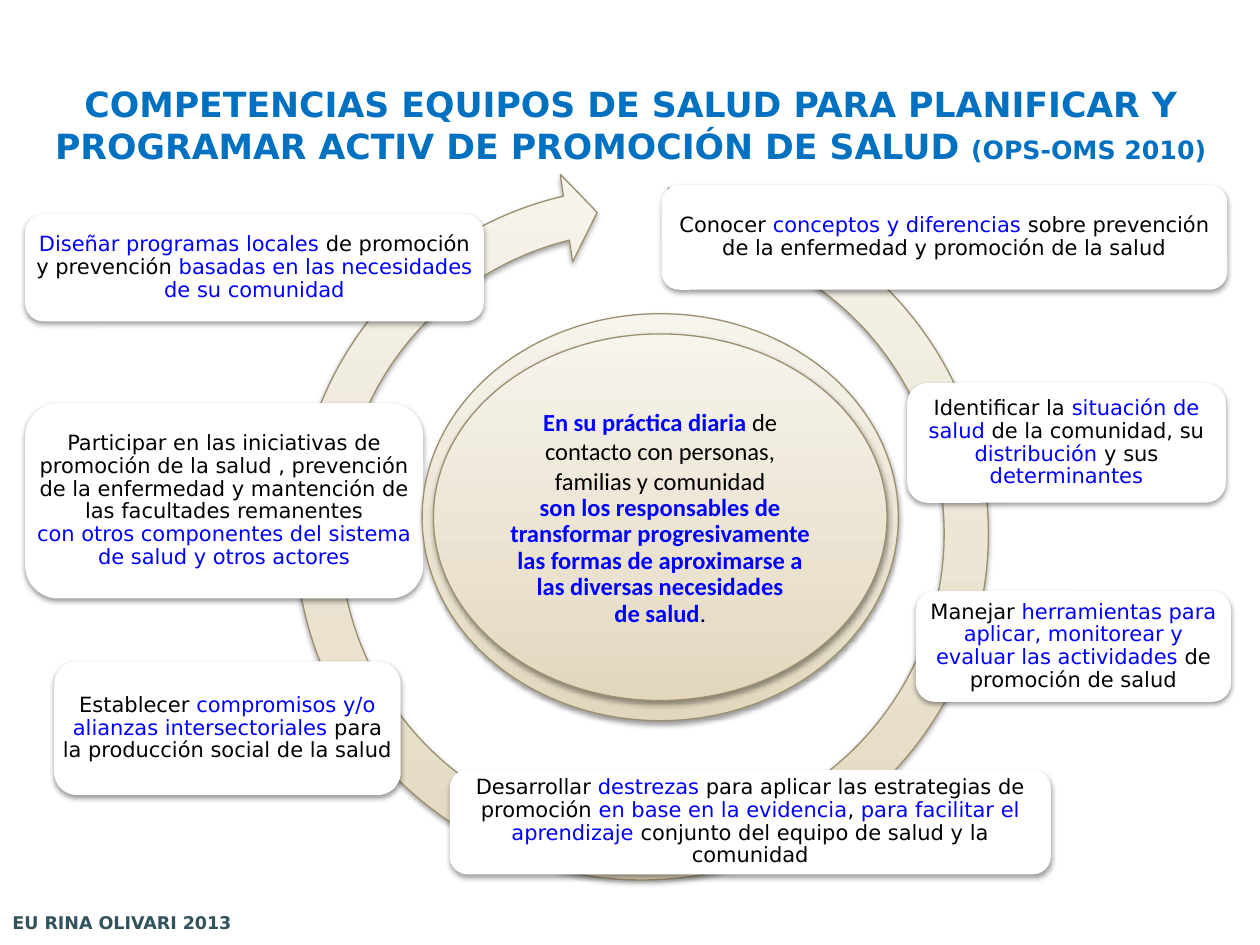
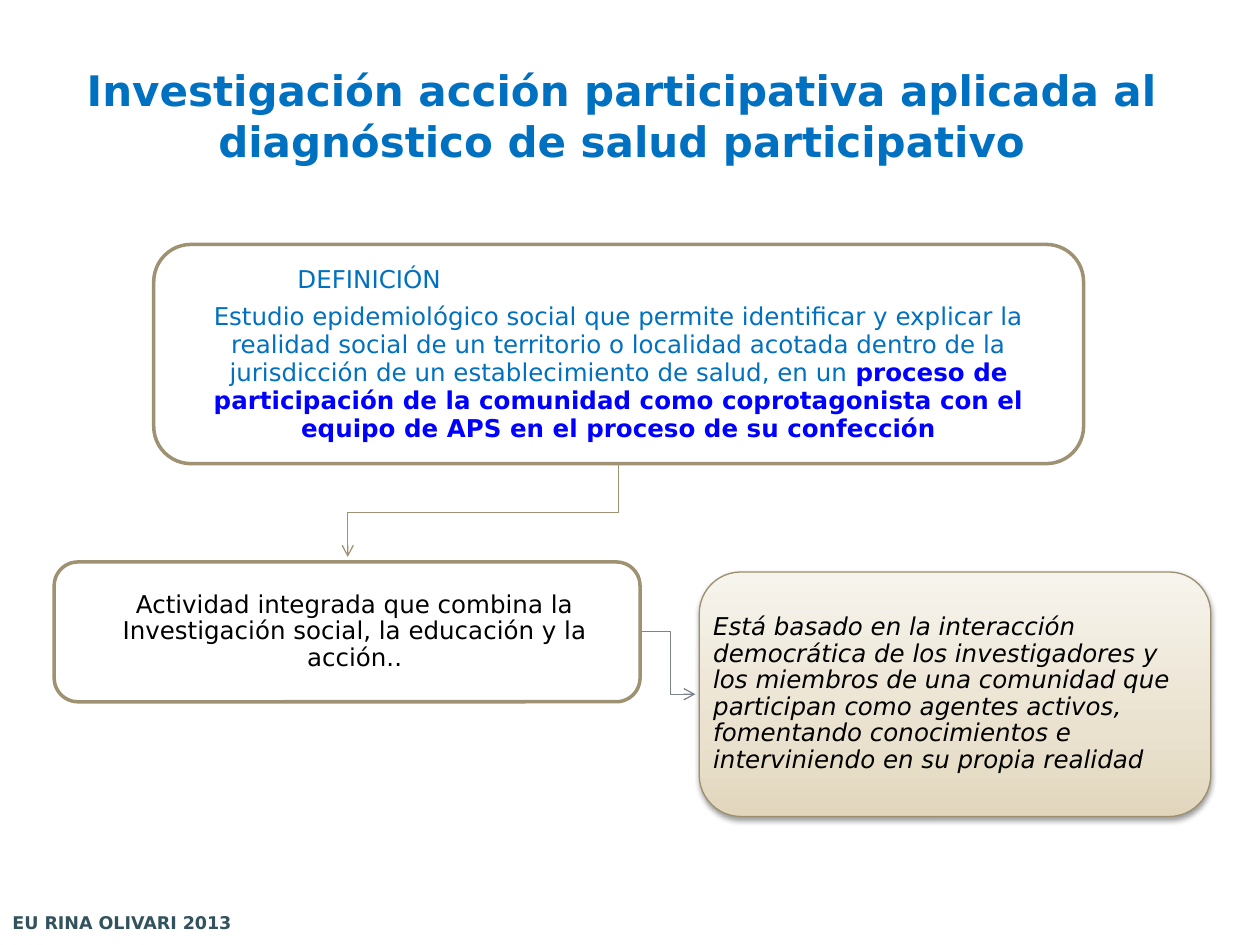
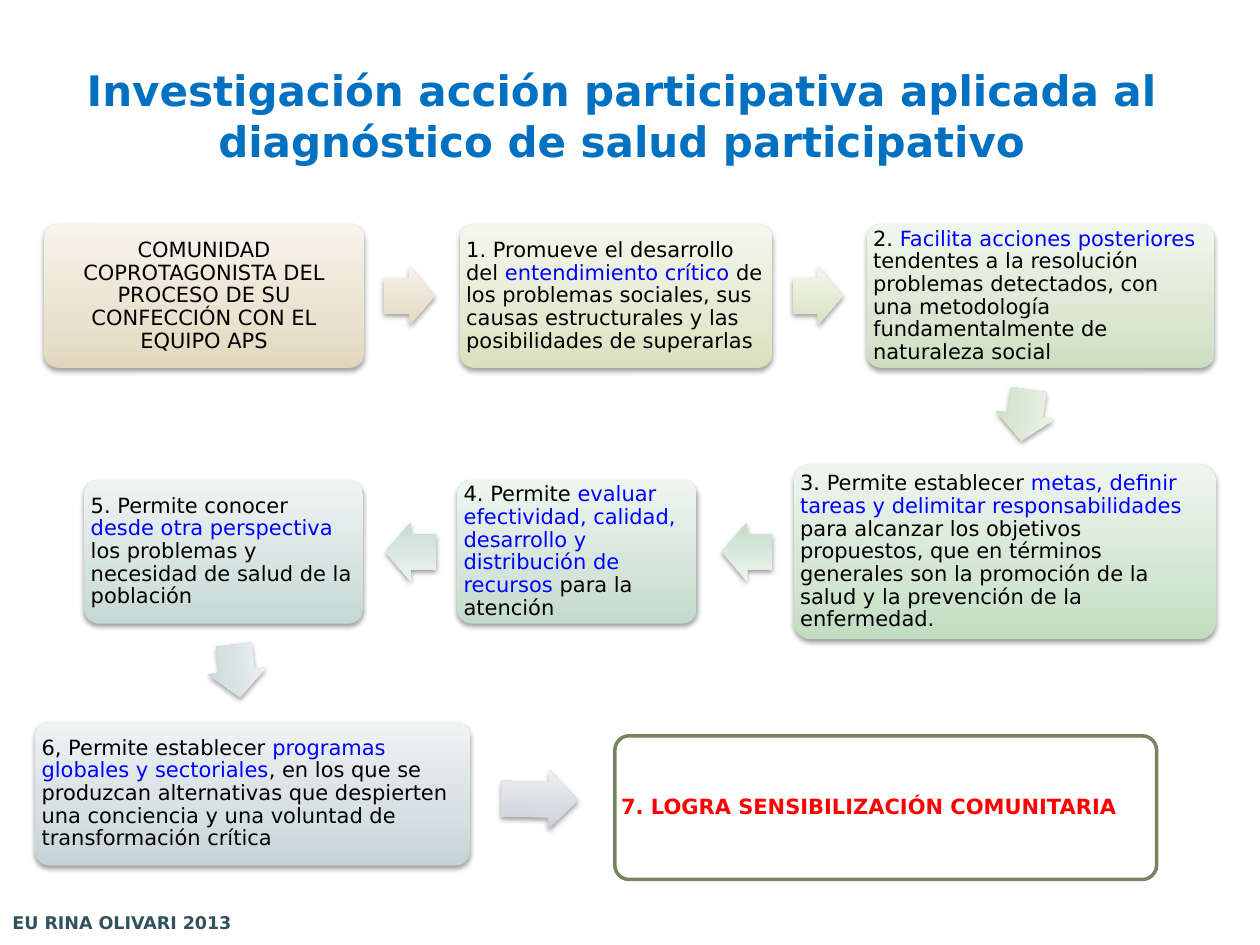
import copy

import lxml.etree
import pptx
import pptx.dml.color
import pptx.enum.shapes
import pptx.enum.text
import pptx.oxml.ns
import pptx.util

SHAPE = pptx.enum.shapes.MSO_SHAPE
ALIGN = pptx.enum.text.PP_ALIGN
COLUMNS, ROWS = 100, 75
CORNER = 0.29  # share of the corner radius that a rounded box takes from its text

COLORS = {
    "white": "FFFFFF",
    "black": "000000",
    "title": "0070C0",
    "accent": "0000FF",
    "alert": "FF0000",
    "footer": "32525D",
    "sand": "E2D7BD",
    "sand line": "9C8F6F",
    "outline": "9E9273",
    "link": "7E848D",
    "goal line": "748560",
    "olive": "DBE0BE",
    "olive arrow": "D8E0BF",
    "leaf": "CDDEC0",
    "leaf arrow": "C9DEC0",
    "green": "C2DCC1",
    "green arrow": "C2DBC6",
    "mint": "C3DACB",
    "mint arrow": "C4D9D1",
    "teal": "C5D8D4",
    "teal arrow": "C6D5D7",
    "slate": "C6D3D6",
    "slate arrow": "C8CDD5",
}


def add_xml(parent, tag, **attributes):
    return lxml.etree.SubElement(parent, pptx.oxml.ns.qn(tag), attributes)


def rgb(name, tint=0):
    """Named colour, mixed with white by the share `tint`."""
    base = pptx.dml.color.RGBColor.from_string(COLORS[name])
    return pptx.dml.color.RGBColor(*(round(c + (255 - c) * tint) for c in base))


class Deck:
    font = "DejaVu Sans"
    footer_text = "EU RINA OLIVARI 2013"

    def __init__(self):
        self.file = pptx.Presentation()
        self.file.slide_width = pptx.util.Inches(10)
        self.file.slide_height = pptx.util.Inches(7.5)
        self.unit_x = self.file.slide_width / COLUMNS
        self.unit_y = self.file.slide_height / ROWS
        self.slide = None

    def new_slide(self, title, left=3.5, width=91.7, size=24):
        self.slide = self.file.slides.add_slide(self.file.slide_layouts[6])
        box = self.slide.shapes.add_textbox(*self.place(left, 4.4, width, 9.5))
        return box, self.put_text(box, title, size, "title", "title", bold=True,
                                  accent_bold=True, spacing=1, pad=(1, 0.5))

    def place(self, left, top, width, height):
        return [round(left * self.unit_x), round(top * self.unit_y),
                round(width * self.unit_x), round(height * self.unit_y)]

    # Text: *accented*, "\n" ends a paragraph, "\v" ends a line
    def put_text(self, shape, text, size=12, color="black", accent="accent", bold=False,
                 accent_bold=False, italic=False, align=ALIGN.CENTER, spacing=0.9,
                 pad=(0.5, 0.5), font=None):
        frame = shape.text_frame
        frame.word_wrap = True
        frame.vertical_anchor = pptx.enum.text.MSO_ANCHOR.MIDDLE
        frame.margin_left = frame.margin_right = round(pad[0] * self.unit_x)
        frame.margin_top = frame.margin_bottom = round(pad[1] * self.unit_y)
        for number, block in enumerate(text.split("\n")):
            paragraph = frame.add_paragraph() if number else frame.paragraphs[0]
            paragraph.alignment = align
            paragraph.line_spacing = spacing
            for index, part in enumerate(block.split("*")):
                marked = index % 2 == 1
                for line_number, line in enumerate(part.split("\v")):
                    if line_number:
                        paragraph.add_line_break()
                    if not line:
                        continue
                    run = paragraph.add_run()
                    run.text = line
                    run.font.name = font or self.font
                    run.font.size = pptx.util.Pt(size)
                    run.font.bold = accent_bold if marked else bold
                    run.font.italic = italic
                    run.font.color.rgb = rgb(accent if marked else color)
        return frame.paragraphs

    # Preset shapes
    def shape(self, kind, area, fill, line=None, weight=0.75, shadow=True, adjust=()):
        shape = self.slide.shapes.add_shape(kind, *self.place(*area))
        for index, value in enumerate(adjust):
            shape.adjustments[index] = value
        if fill == "white":
            shape.fill.solid()
            shape.fill.fore_color.rgb = rgb(fill)
        else:
            self.shade(shape, fill)
        self.outline(shape, line, weight)
        shape.shadow.inherit = False
        if shadow:
            self.drop_shadow(shape)
        return shape

    def shade(self, shape, base):
        shape.fill.gradient()
        shape.fill.gradient_angle = 90
        stop_list = next(shape.element.spPr.iter(pptx.oxml.ns.qn("a:gsLst")))
        stop_list.insert(1, copy.deepcopy(stop_list[0]))
        for stop, position, tint in zip(shape.fill.gradient_stops, (0, 0.35, 1), (0, 0.28, 0.72)):
            stop.position = position
            stop.color.rgb = rgb(base, tint)

    def outline(self, shape, line, weight):
        if line is None:
            shape.line.fill.background()
        else:
            shape.line.color.rgb = rgb(line)
            shape.line.width = pptx.util.Pt(weight)

    def drop_shadow(self, shape):
        effects = shape.element.spPr.find(pptx.oxml.ns.qn("a:effectLst"))
        outer = add_xml(effects, "a:outerShdw", blurRad=str(pptx.util.Pt(3.1)),
                        dist=str(pptx.util.Pt(1.6)), dir="5400000", rotWithShape="0")
        tone = add_xml(outer, "a:srgbClr", val=COLORS["black"])
        add_xml(tone, "a:alpha", val="38000")

    def card(self, area, text, fill="white", line=None, shadow=True, corner=0.17,
             pad=0.5, **style):
        card = self.shape(SHAPE.ROUNDED_RECTANGLE, area, fill, line, 2 if fill == "white" else 0.75,
                          shadow, (corner,))
        inset = max(0, pad - CORNER * corner * min(area[2:]))
        return self.put_text(card, text, pad=(inset, inset), **style)

    def arrow(self, center, middle, length, turn, fill):
        height = 4.7
        arrow = self.shape(SHAPE.RIGHT_ARROW,
                           (center - length / 2, middle - height / 2, length, height),
                           fill, adjust=(0.6, 0.5))
        arrow.rotation = turn

    def elbow(self, points, line):
        start, *others = [self.place(x, y, 0, 0)[:2] for x, y in points]
        builder = self.slide.shapes.build_freeform(*start)
        builder.add_line_segments(others, close=False)
        elbow = builder.convert_to_shape()
        elbow.fill.background()
        elbow.shadow.inherit = False
        self.outline(elbow, line, 0.75)
        add_xml(elbow.element.spPr.find(pptx.oxml.ns.qn("a:ln")), "a:tailEnd", type="arrow")

    def footer(self):
        band = self.shape(SHAPE.RECTANGLE, (0, 71.4, 31.1, 3.6), "white", shadow=False)
        tone = next(band.element.spPr.iter(pptx.oxml.ns.qn("a:srgbClr")))
        add_xml(tone, "a:alpha", val="33000")
        self.put_text(band, self.footer_text, 10, "footer", bold=True, align=ALIGN.LEFT,
                      spacing=1, pad=(1, 0.5))


COMPETENCES = [
    ((52.5, 14.7, 44.9, 8.3),
     "Conocer *conceptos y diferencias *sobre prevención de la enfermedad y promoción de la salud"),
    ((72, 30.4, 25.3, 9.5),
     "Identificar la *situación de salud *de la comunidad, su *distribución* y sus *determinantes*"),
    ((72.7, 46.9, 25, 8.8),
     "Manejar *herramientas para aplicar, monitorear y evaluar las actividades *"
     "de promoción de salud"),
    ((35.7, 61.1, 47.7, 8.3),
     "Desarrollar *destrezas* para aplicar las estrategias de promoción "
     "*en base en la evidencia*, *para facilitar el aprendizaje *"
     "conjunto del equipo de salud y la comunidad"),
    ((4.3, 52.5, 27.5, 10.6),
     "Establecer *compromisos y/o alianzas intersectoriales *para la producción social de la salud"),
    ((2, 32, 31.6, 15.5),
     "Participar en las iniciativas de promoción de la salud , prevención de la enfermedad "
     "y mantención de las facultades remanentes\v"
     "*con otros componentes del sistema de salud y otros actores*"),
    ((2, 17, 36.4, 8.5),
     "*Diseñar programas locales *de promoción y prevención "
     "*basadas en las necesidades de su comunidad*"),
]

PRACTICE = (
    "*En su práctica diaria *de\vcontacto con personas, familias y comunidad\n"
    "*son los responsables de transformar progresivamente las formas de aproximarse a "
    "las diversas necesidades\vde salud*."
)

RESEARCH_TITLE = ("Investigación acción participativa aplicada al "
                  "diagnóstico de salud participativo")

# Left, middle, width, height, colour, text
STEPS = [
    (3.5, 23.5, 25.4, 11.4, "sand",
     "COMUNIDAD COPROTAGONISTA DEL PROCESO DE SU CONFECCIÓN CON EL EQUIPO APS"),
    (36.5, 23.5, 24.8, 11.4, "olive",
     "1. Promueve el desarrollo del *entendimiento crítico *de los problemas sociales, "
     "sus causas estructurales y las posibilidades de superarlas"),
    (68.8, 23.5, 27.6, 11.4, "leaf",
     "2. *Facilita acciones posteriores *tendentes a la resolución problemas detectados, con\v"
     "una metodología fundamentalmente de naturaleza social"),
    (63, 43.8, 33.5, 13.9, "green",
     "3. Permite establecer *metas, definir tareas y delimitar responsabilidades *"
     "para alcanzar los objetivos\vpropuestos, que en términos generales son "
     "la promoción de la salud y la prevención de la enfermedad."),
    (36.3, 43.8, 19, 11.4, "mint",
     "4. Permite *evaluar efectividad, calidad, desarrollo y distribución de recursos *"
     "para la atención"),
    (6.7, 43.8, 22.1, 11.4, "teal",
     "5. Permite conocer *desde otra perspectiva *los problemas y necesidad de salud "
     "de la población"),
    (2.8, 63, 34.5, 11.4, "slate",
     "6, Permite establecer *programas globales y sectoriales*, en los que se produzcan "
     "alternativas que despierten una conciencia y una voluntad de transformación crítica"),
]

# Center, middle, length, rotation, colour
STEP_ARROWS = [
    (32.5, 23.5, 4, 0, "sand"),
    (64.9, 23.5, 4, 0, "olive arrow"),
    (81.35, 32.95, 4.1, 98.3, "leaf arrow"),
    (59.3, 43.8, 4, 180, "green arrow"),
    (32.6, 43.8, 4, 180, "mint arrow"),
    (18.8, 53.25, 4.2, 83.2, "teal arrow"),
    (42.85, 63.45, 6.1, 1.2, "slate arrow"),
]


def competences_slide(deck):
    heading, paragraphs = deck.new_slide(
        "COMPETENCIAS EQUIPOS DE SALUD PARA PLANIFICAR Y PROGRAMAR ACTIV DE "
        "PROMOCIÓN DE SALUD *(OPS-OMS 2010)*", 2, 96.1, 19.8)
    heading.text_frame.margin_top = pptx.util.Inches(0.2)
    paragraphs[0].runs[-1].font.size = pptx.util.Pt(14.4)

    # Cycle and its competences
    deck.shape(SHAPE.CIRCULAR_ARROW, (21.7, 13.1, 58.5, 58.5), "sand", "sand line",
               adjust=(0.06, 3.31, 153.92, 164.61, 0.06))
    for area, text in COMPETENCES:
        deck.card(area, text)
    deck.footer()

    # Daily practice at the centre
    deck.shape(SHAPE.FLOWCHART_CONNECTOR, (33.5, 24.9, 37.8, 32.3), "sand", "sand line")
    practice = deck.shape(SHAPE.FLOWCHART_CONNECTOR, (34.4, 26.5, 36, 29.1), "sand", "sand line")
    paragraphs = deck.put_text(practice, PRACTICE, 14, accent_bold=True, pad=(0.7, 0.7),
                               font="Calibri")
    paragraphs[0].line_spacing = 1.0


def definition_slide(deck):
    deck.new_slide(RESEARCH_TITLE)

    # Links
    deck.elbow([(49.1, 36.7), (49.1, 40.7), (27.6, 40.7), (27.6, 44.2)], "outline")
    deck.elbow([(50.8, 50.1), (53.2, 50.1), (53.2, 55.1), (55.2, 55.1)], "link")

    # Definition, with its label set off to the left
    label, _ = deck.card(
        (12.2, 19.4, 73.8, 17.4),
        "DEFINICIÓN\n"
        "Estudio epidemiológico social que permite identificar y explicar la realidad social "
        "de un territorio o localidad acotada dentro de la jurisdicción de un establecimiento "
        "de salud, en un *proceso de participación de la comunidad como coprotagonista "
        "con el equipo de APS en el proceso de su confección*",
        line="outline", shadow=False, pad=1.1, size=14, color="title", accent_bold=True,
        spacing=pptx.util.Pt(16))
    label.alignment = ALIGN.LEFT
    label.space_after = pptx.util.Pt(5)
    label._p.get_or_add_pPr().set("marL", str(pptx.util.Inches(1.03)))

    # Features
    activity, = deck.card(
        (4.3, 44.6, 46.5, 11.1),
        "Actividad integrada que combina la Investigación social, la educación y la acción..",
        line="outline", shadow=False, pad=1.1, size=14)
    activity._p.get_or_add_pPr().set("marL", str(pptx.util.Inches(0.12)))
    deck.card(
        (55.5, 45.4, 40.6, 19.4),
        "Está basado en la interacción democrática de los investigadores y los miembros de una "
        "comunidad que participan como agentes activos, fomentando conocimientos e "
        "interviniendo en su propia realidad",
        "sand", "sand line", pad=1.1, size=14, italic=True, align=ALIGN.LEFT)
    deck.footer()


def process_slide(deck):
    deck.new_slide(RESEARCH_TITLE)
    for number, (left, middle, width, height, fill, text) in enumerate(STEPS):
        deck.card((left, middle - height / 2, width, height), text, fill, corner=0.1,
                  align=ALIGN.LEFT if number else ALIGN.CENTER)
    for step_arrow in STEP_ARROWS:
        deck.arrow(*step_arrow)
    deck.card((48.8, 58.4, 43, 11.4), "7. LOGRA SENSIBILIZACIÓN COMUNITARIA", line="goal line",
              shadow=False, corner=0.1, color="alert", bold=True, align=ALIGN.LEFT)
    deck.footer()


def main():
    deck = Deck()
    competences_slide(deck)
    definition_slide(deck)
    process_slide(deck)
    deck.file.save("out.pptx")


if __name__ == "__main__":
    main()
